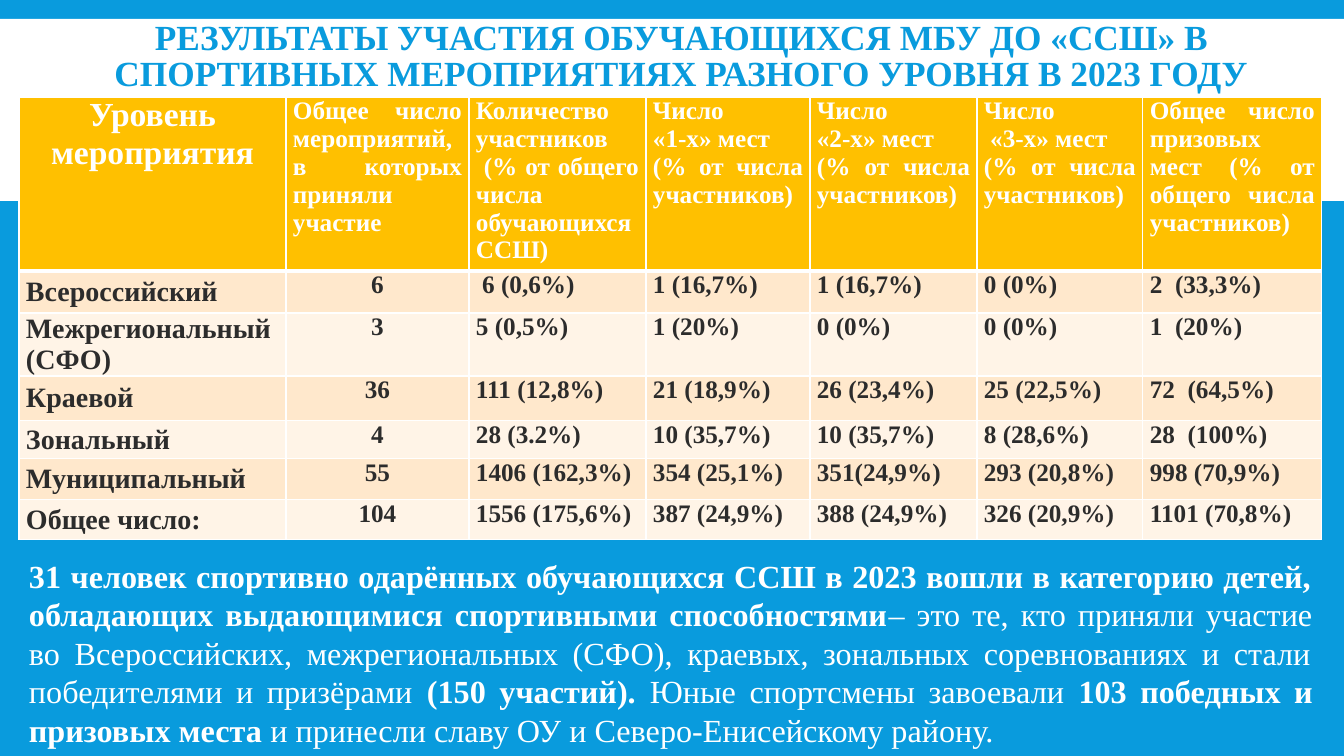
from lxml import etree
from pptx import Presentation
from pptx.dml.color import RGBColor
from pptx.enum.shapes import MSO_SHAPE
from pptx.enum.text import MSO_ANCHOR, MSO_AUTO_SIZE, PP_ALIGN
from pptx.oxml.ns import qn
from pptx.util import Pt

RECTANGLE = MSO_SHAPE.RECTANGLE
TOP, MIDDLE = MSO_ANCHOR.TOP, MSO_ANCHOR.MIDDLE
NO_AUTOFIT = MSO_AUTO_SIZE.NONE
CENTER, JUSTIFY = PP_ALIGN.CENTER, PP_ALIGN.JUSTIFY
PIXEL = 914400 / 100.8
BLUE, WHITE, AMBER, DARK = "099BDD", "FFFFFF", "FFC000", "2C2C2C"
BAND_FILLS = ["FFE8CC", "FFF4E7"]


def style_paragraph(paragraph, size, color, alignment):
    paragraph.alignment = alignment
    for run in paragraph.runs:
        run.font.name = "Times New Roman"
        run.font.size = Pt(size)
        run.font.bold = True
        run.font.color.rgb = RGBColor.from_string(color)


def add_border(cell, side, width):
    line = etree.SubElement(cell._tc.get_or_add_tcPr(), qn(f"a:ln{side}"), w=str(Pt(width)))
    fill = etree.SubElement(line, qn("a:solidFill"))
    etree.SubElement(fill, qn("a:srgbClr"), val=WHITE)


presentation = Presentation()
presentation.slide_width = round(1344 * PIXEL)
presentation.slide_height = round(756 * PIXEL)
slide = presentation.slides.add_slide(presentation.slide_layouts[5])
slide.background.fill.solid()
slide.background.fill.fore_color.rgb = RGBColor.from_string(BLUE)

title = slide.shapes.title
title_band = slide.shapes.add_shape(
    RECTANGLE, 0, round(19 * PIXEL), presentation.slide_width, round(182 * PIXEL))
title_band.shadow.inherit = False
title_band.fill.solid()
title_band.fill.fore_color.rgb = RGBColor.from_string(WHITE)
title_band.line.fill.background()
title._element.addprevious(title_band._element)

title.left, title.top, title.width, title.height = [
    round(length * PIXEL) for length in (37, 19, 1289, 78)]
title.text_frame.text = (
    "РЕЗУЛЬТАТЫ УЧАСТИЯ ОБУЧАЮЩИХСЯ МБУ ДО «ССШ» В СПОРТИВНЫХ МЕРОПРИЯТИЯХ "
    "РАЗНОГО УРОВНЯ В 2023 ГОДУ")
title.text_frame.auto_size = NO_AUTOFIT
title.text_frame.word_wrap = True
title.text_frame.vertical_anchor = MIDDLE
title_paragraph = title.text_frame.paragraphs[0]
title_paragraph.line_spacing = 0.85
style_paragraph(title_paragraph, 25.2, BLUE, CENTER)

results = [
    ["Уровень мероприятия",
     "Общее число мероприятий, в которых приняли участие",
     "Количество\nучастников\n (% от общего числа обучающихся ССШ)",
     "Число\n«1-х» мест\n(% от числа участников)",
     "Число\n«2-х» мест\n(% от числа участников)",
     "Число\n «3-х» мест\n(% от числа участников)",
     "Общее число призовых мест (% от общего числа участников)"],
    ["Всероссийский", "6", " 6 (0,6%)", "1 (16,7%)", "1 (16,7%)", "0 (0%)", "2  (33,3%)"],
    ["Межрегиональный (СФО)", "3", "5 (0,5%)", "1 (20%)", "0 (0%)", "0 (0%)", "1  (20%)"],
    ["Краевой", "36", "111 (12,8%)", "21 (18,9%)", "26 (23,4%)", "25 (22,5%)", "72  (64,5%)"],
    ["Зональный", "4", "28 (3.2%)", "10 (35,7%)", "10 (35,7%)", "8 (28,6%)", "28  (100%)"],
    ["Муниципальный", "55", "1406 (162,3%)", "354 (25,1%)", "351(24,9%)", "293 (20,8%)",
     "998 (70,9%)"],
    ["Общее число:", "104", "1556 (175,6%)", "387 (24,9%)", "388 (24,9%)", "326 (20,9%)",
     "1101 (70,8%)"],
]
column_widths = [267, 183, 177, 164, 167, 166, 179]
row_heights = [174, 42, 63, 45, 38, 41, 40]
table = slide.shapes.add_table(
    len(row_heights), len(column_widths), round(19 * PIXEL), round(97 * PIXEL),
    round(sum(column_widths) * PIXEL), round(sum(row_heights) * PIXEL)).table
for column, width in zip(table.columns, column_widths):
    column.width = round(width * PIXEL)
for row, height in zip(table.rows, row_heights):
    row.height = round(height * PIXEL)

for row_index, texts in enumerate(results):
    is_header = row_index == 0
    for column_index, text in enumerate(texts):
        is_level = column_index == 0
        cell = table.cell(row_index, column_index)
        cell.margin_left = cell.margin_right = round(7 * PIXEL)
        cell.margin_top = cell.margin_bottom = 0
        cell.vertical_anchor = MIDDLE if is_level and not is_header else TOP
        for side in "LR":
            add_border(cell, side, 1)
        add_border(cell, "T", 3 if row_index == 1 else 1)
        add_border(cell, "B", 3 if is_header else 1)
        cell.fill.solid()
        cell.fill.fore_color.rgb = RGBColor.from_string(
            AMBER if is_header else BAND_FILLS[(row_index - 1) % 2])
        size = 18
        if is_level:
            size = 24 if is_header else 20
        centered_column = 0 if is_header else 1
        alignment = CENTER if column_index == centered_column else JUSTIFY
        cell.text_frame.text = text
        for paragraph in cell.text_frame.paragraphs:
            style_paragraph(paragraph, size, WHITE if is_header else DARK, alignment)

summary_parts = [
    "31 человек спортивно одарённых обучающихся ССШ в 2023 вошли в категорию детей, "
    "обладающих выдающимися спортивными способностями",
    "– это те, кто приняли участие во Всероссийских, межрегиональных (СФО), краевых, "
    "зональных соревнованиях и стали победителями и призёрами",
    " (150 участий). ",
    "Юные спортсмены завоевали ",
    "103 победных и призовых места ",
    "и принесли славу ОУ и Северо-Енисейскому району.",
]
summary = slide.shapes.add_textbox(
    *[round(length * PIXEL) for length in (19, 551, 1304, 205)])
summary.text_frame.word_wrap = True
summary_paragraph = summary.text_frame.paragraphs[0]
for part in summary_parts:
    summary_paragraph.add_run().text = part
style_paragraph(summary_paragraph, 23, WHITE, JUSTIFY)
for run in summary_paragraph.runs[1::2]:
    run.font.bold = False

presentation.save("out.pptx")
